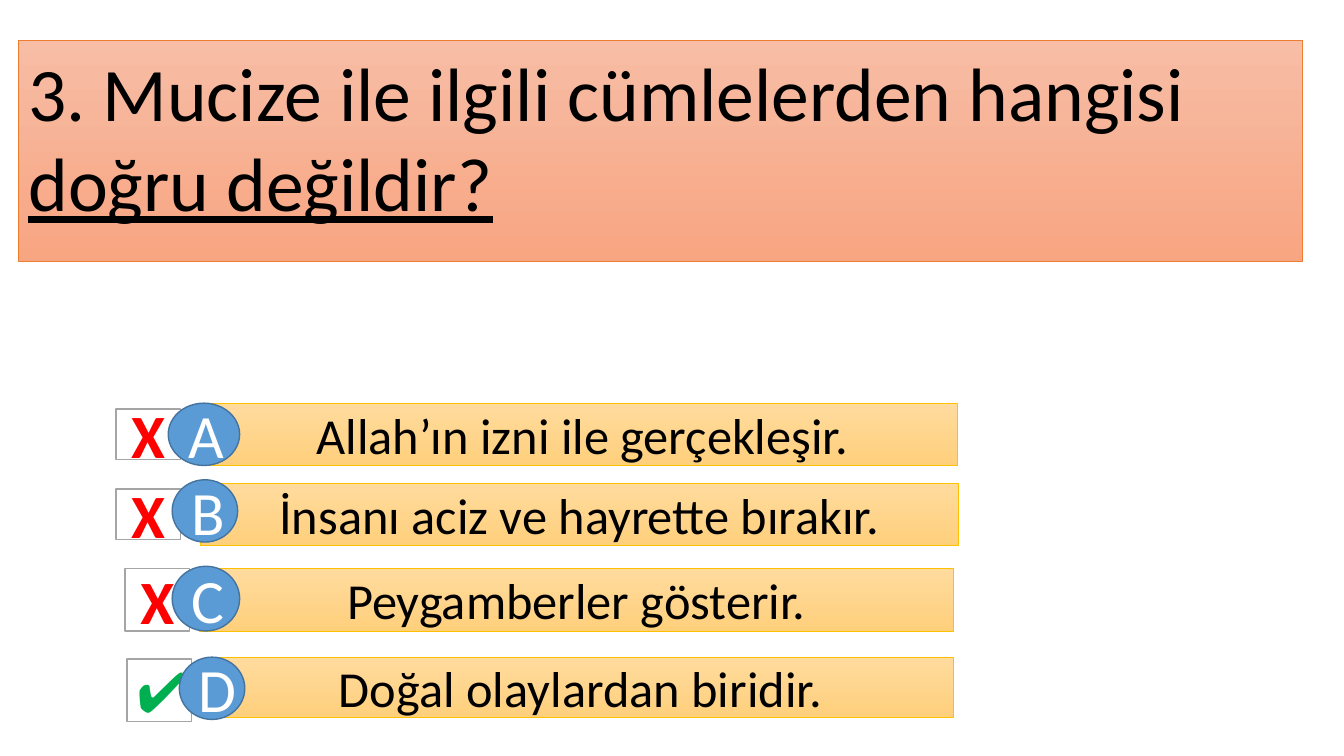
from pptx import Presentation
from pptx.dml.color import RGBColor
from pptx.enum.shapes import MSO_SHAPE as Kind
from pptx.enum.text import MSO_ANCHOR as Anchor, MSO_AUTO_SIZE as Fit, PP_ALIGN as Align
from pptx.util import Cm, Pt


def paint(shape, fills, edge, width):
    """Fill with one colour, or from top to bottom with two, and set the outline."""
    if len(fills) == 1:
        shape.fill.solid()
        shape.fill.fore_color.rgb = RGBColor.from_string(fills[0])
    else:
        shape.fill.gradient()
        shape.fill.gradient_angle = 270
        for stop, tone in zip(shape.fill.gradient_stops, fills):
            stop.color.rgb = RGBColor.from_string(tone)
    shape.line.color.rgb = RGBColor.from_string(edge)
    shape.line.width = Pt(width)


def add_box(kind, place, fills, edge, width, text, size, color, bold=False):
    box = slide.shapes.add_shape(kind, *[Cm(n) for n in place])
    box.shadow.inherit = False
    paint(box, fills, edge, width)
    frame = box.text_frame
    frame.vertical_anchor = Anchor.MIDDLE
    frame.word_wrap = True
    par = frame.paragraphs[0]
    par.text = text
    par.alignment = Align.CENTER
    font = par.font
    font.name, font.size, font.bold = "Calibri", Pt(size), bold
    font.color.rgb = RGBColor.from_string(color)


deck = Presentation()
deck.slide_width, deck.slide_height = Cm(33.87), Cm(19.05)
slide = deck.slides.add_slide(deck.slide_layouts[5])

# Question
title = slide.shapes.title
title.left, title.top, title.width, title.height = Cm(0.46), Cm(1.02), Cm(32.36), Cm(5.56)
paint(title, ["F7BDA5", "F8A582"], "ED7D31", 0.5)
frame = title.text_frame
frame.auto_size = Fit.NONE
frame.word_wrap = True
frame.vertical_anchor = Anchor.TOP
par = frame.paragraphs[0]
par.alignment = Align.LEFT
par.space_before = Pt(4)
par.font.name, par.font.size = "Calibri", Pt(54)
par.font.color.rgb = RGBColor.from_string("000000")
par.add_run().text = "3. Mucize ile ilgili cümlelerden hangisi "
key = par.add_run()
key.text = "doğru değildir?"
key.font.underline = True

# Answers: letter, text, right or wrong, then places of bar, mark and badge
answers = [
    ("A", "Allah’ın izni ile gerçekleşir.", False,
     (5.23, 10.16, 18.9, 1.57), (2.92, 10.31, 1.63, 1.27), (4.24, 10.16, 1.8, 1.57)),
    ("B", "İnsanı aciz ve hayrette bırakır.", False,
     (5.05, 12.17, 19.1, 1.57), (2.92, 12.32, 1.63, 1.27), (4.34, 12.09, 1.65, 1.57)),
    ("C", "Peygamberler gösterir.", False,
     (5.03, 14.33, 19, 1.57), (3.15, 14.33, 1.63, 1.57), (4.34, 14.27, 1.7, 1.63)),
    ("D", "Doğal olaylardan biridir.", True,
     (5.23, 16.56, 18.8, 1.52), (3.2, 16.61, 1.63, 1.57), (4.52, 16.56, 1.65, 1.57)),
]
for letter, text, right, bar, mark, badge in answers:
    add_box(Kind.RECTANGLE, bar, ["FFDB9E", "FFD07C"], "FFC000", 0.5, text, 36, "000000")
    sign = ("✔", 40, "00B050") if right else ("X", 44, "FF0000", True)
    add_box(Kind.RECTANGLE, mark, ["FFFFFF"], "A5A5A5", 1, *sign)
    add_box(Kind.OVAL, badge, ["5B9BD5"], "43739E", 1, letter, 44, "FFFFFF")

deck.save("out.pptx")
